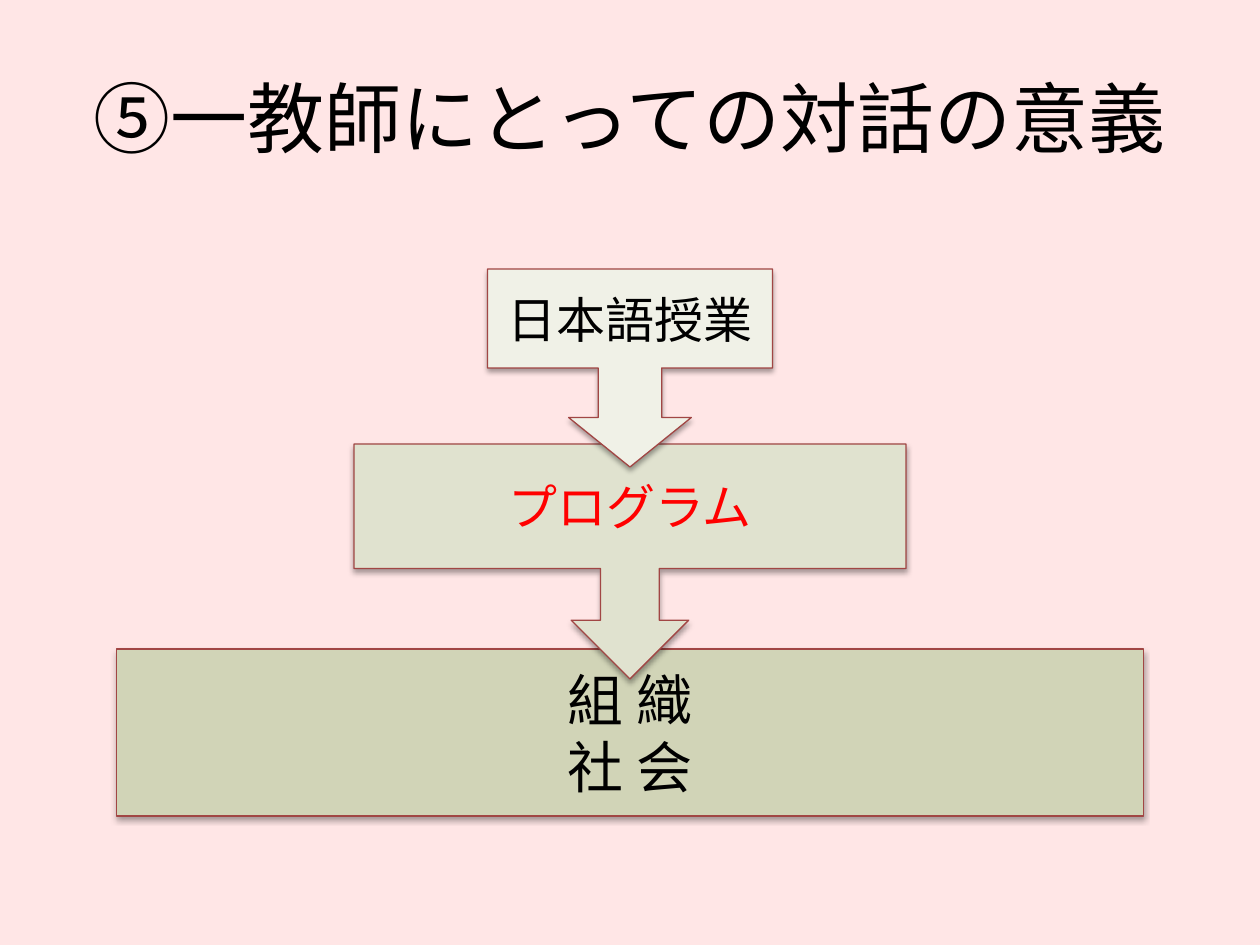
from lxml import etree
from pptx import Presentation
from pptx.dml.color import RGBColor
from pptx.enum.shapes import MSO_SHAPE
from pptx.enum.text import MSO_ANCHOR, PP_ALIGN
from pptx.oxml.ns import qn
from pptx.util import Emu, Pt

RECTANGLE = MSO_SHAPE.RECTANGLE
CALLOUT = MSO_SHAPE.DOWN_ARROW_CALLOUT
MIDDLE = MSO_ANCHOR.MIDDLE
CENTER = PP_ALIGN.CENTER

EMU_PER_PX = 914400 / 126
SLIDE_WIDTH, SLIDE_HEIGHT = 1260, 945
FONT = "Calibri"
BLACK, RED = "000000", "FF0000"
BACKGROUND, OUTLINE = "FFE6E6", "A14644"


def px(length):
    return Emu(round(length * EMU_PER_PX))


def color(hex_string):
    return RGBColor.from_string(hex_string)


def centered_box(top, width, height):
    """Left, top, width and height of a box centred across the slide."""
    return [px(n) for n in ((SLIDE_WIDTH - width) / 2, top, width, height)]


def write_text(shape, lines, size, text_color):
    frame = shape.text_frame
    frame.word_wrap = True
    frame.vertical_anchor = MIDDLE
    for index, line in enumerate(lines):
        paragraph = frame.add_paragraph() if index else frame.paragraphs[0]
        paragraph.alignment = CENTER
        run = paragraph.add_run()
        run.text = line
        run.font.name = FONT
        run.font.size = Pt(size)
        run.font.color.rgb = color(text_color)


def add_soft_shadow(shape):
    shape.shadow.inherit = False
    effects = shape._element.spPr.find(qn("a:effectLst"))
    shadow = etree.SubElement(
        effects, qn("a:outerShdw"), blurRad=str(Pt(3.1)), dist=str(Pt(1.8)),
        dir="5400000", rotWithShape="0")
    shade = etree.SubElement(shadow, qn("a:srgbClr"), val=BLACK)
    etree.SubElement(shade, qn("a:alpha"), val="35000")


def add_title(slide, text):
    title = slide.shapes.add_textbox(*centered_box(38, 1134, 157))
    write_text(title, [text], 44, BLACK)


def add_level(slide, kind, box, fill, lines, size, text_color=BLACK,
              adjustments=()):
    shape = slide.shapes.add_shape(kind, *box)
    for index, value in enumerate(adjustments):
        shape.adjustments[index] = value
    shape.fill.solid()
    shape.fill.fore_color.rgb = color(fill)
    shape.line.color.rgb = color(OUTLINE)
    shape.line.width = Pt(0.75)
    add_soft_shadow(shape)
    write_text(shape, lines, size, text_color)


def main():
    presentation = Presentation()
    presentation.slide_width = px(SLIDE_WIDTH)
    presentation.slide_height = px(SLIDE_HEIGHT)
    slide = presentation.slides.add_slide(presentation.slide_layouts[6])
    slide.background.fill.solid()
    slide.background.fill.fore_color.rgb = color(BACKGROUND)

    add_title(slide, "⑤一教師にとっての対話の意義")
    # Lowest level first, so that each arrow overlaps the level below it.
    add_level(slide, RECTANGLE, centered_box(649, 1027, 167), "D1D4B7",
              ["組 織", "社 会"], 32)
    add_level(slide, CALLOUT, centered_box(444, 552, 235), "E0E2CF",
              ["プログラム"], 28, RED, (0.25, 0.25, 0.25, 0.53))
    add_level(slide, CALLOUT, centered_box(269, 285, 198), "F0F1E7",
              ["日本語授業"], 28, BLACK, (0.32, 0.31, 0.25, 0.5))

    presentation.save("out.pptx")


if __name__ == "__main__":
    main()
